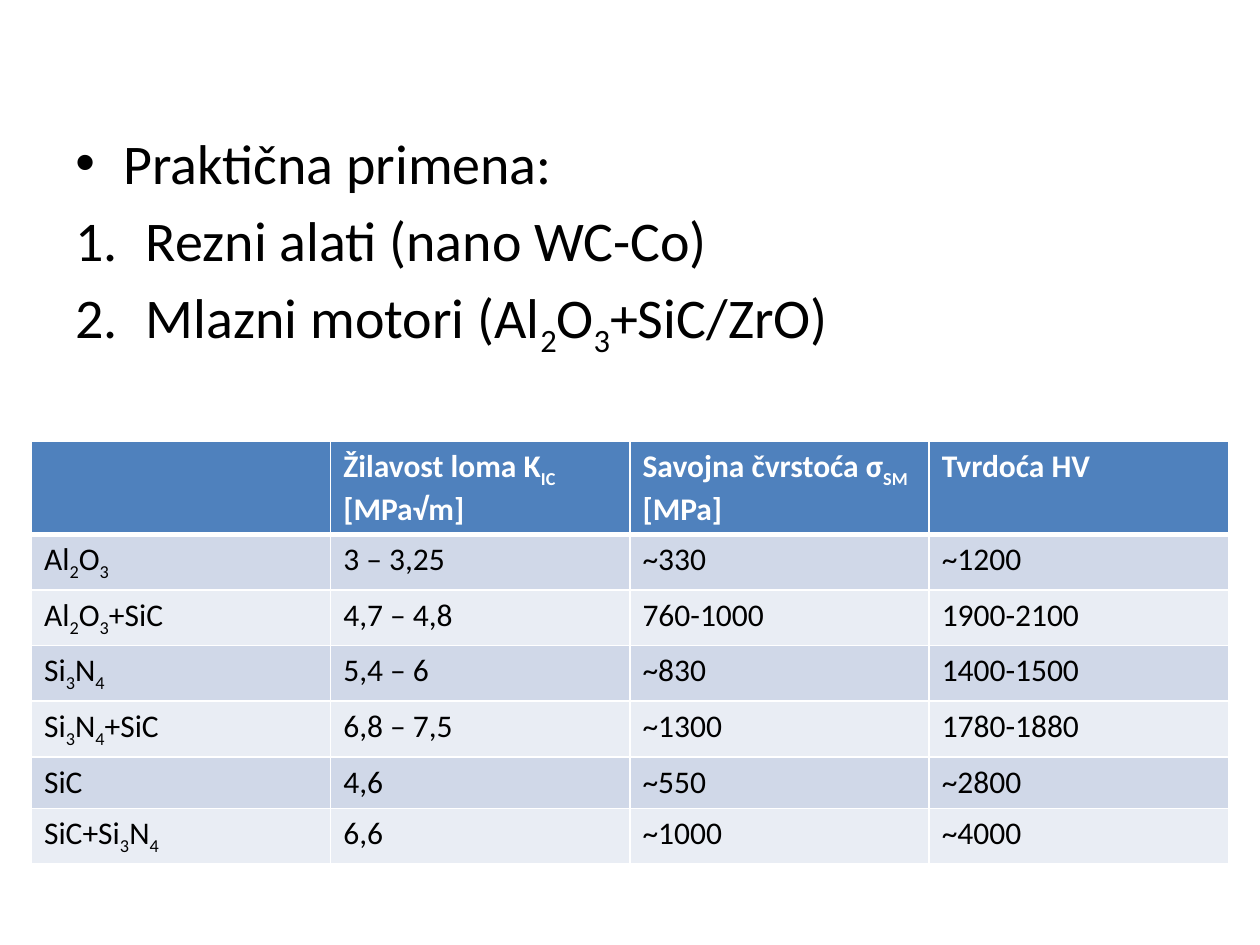
from lxml import etree
from pptx import Presentation
from pptx.dml.color import RGBColor
from pptx.oxml.ns import qn
from pptx.util import Inches, Pt

FONT = "Calibri"
COLORS = {
    "text": "000000",
    "white": "FFFFFF",
    "header": "4F81BD",
    "odd": "D0D8E8",
    "even": "E9EDF4",
}
SUBSCRIPT_MARK = "|"
BULLETS = [
    ("Praktična primena:", 0.38, "buChar", {"char": "•"}),
    ("Rezni alati (nano WC-Co)", 0.56, "buAutoNum", {"type": "arabicPeriod"}),
    ("Mlazni motori (Al|2|O|3|+SiC/ZrO)", 0.56, "buAutoNum", {"type": "arabicPeriod"}),
]
PROPERTIES = [
    ["", "Žilavost loma K|IC| [MPa√m]", "Savojna čvrstoća σ|SM |[MPa]", "Tvrdoća HV"],
    ["Al|2|O|3", "3 – 3,25", "~330", "~1200"],
    ["Al|2|O|3|+SiC", "4,7 – 4,8", "760-1000", "1900-2100"],
    ["Si|3|N|4", "5,4 – 6", "~830", "1400-1500"],
    ["Si|3|N|4|+SiC", "6,8 – 7,5", "~1300", "1780-1880"],
    ["SiC", "4,6", "~550", "~2800"],
    ["SiC+Si|3|N|4", "6,6", "~1000", "~4000"],
]


def write_text(paragraph, text, size=18, color="text", bold=False):
    for index, part in enumerate(text.split(SUBSCRIPT_MARK)):
        if not part:
            continue
        run = paragraph.add_run()
        run.text = part
        run.font.name = FONT
        run.font.size = Pt(size)
        run.font.bold = bold
        run.font.color.rgb = RGBColor.from_string(COLORS[color])
        if index % 2:
            run.font._element.set("baseline", "-25000")


def set_bullet(paragraph, indent, tag, attributes):
    properties = paragraph._p.get_or_add_pPr()
    properties.set("marL", str(Inches(indent)))
    properties.set("indent", str(-Inches(indent)))
    font = etree.SubElement(properties, qn("a:buFont"))
    font.set("typeface", "Arial" if tag == "buChar" else "+mj-lt")
    etree.SubElement(properties, qn(f"a:{tag}"), attributes)


def set_borders(cell, bottom_width):
    properties = cell._tc.get_or_add_tcPr()
    for side, width in (("L", 1), ("R", 1), ("T", 1), ("B", bottom_width)):
        line = etree.SubElement(properties, qn(f"a:ln{side}"), w=str(Pt(width)))
        fill = etree.SubElement(line, qn("a:solidFill"))
        etree.SubElement(fill, qn("a:srgbClr"), val=COLORS["white"])


def add_applications(slide, left, top, width, height):
    shape = slide.shapes.add_textbox(left, top, width, height)
    frame = shape.text_frame
    frame.word_wrap = True
    for index, (text, indent, tag, attributes) in enumerate(BULLETS):
        paragraph = frame.add_paragraph() if index else frame.paragraphs[0]
        paragraph.space_before = Pt(5.5)
        set_bullet(paragraph, indent, tag, attributes)
        write_text(paragraph, text, size=32)


def add_properties_table(slide, left, top, width, height):
    table = slide.shapes.add_table(
        len(PROPERTIES), len(PROPERTIES[0]), left, top, width, height
    ).table
    for row_index, values in enumerate(PROPERTIES):
        is_header = row_index == 0
        fill = "header" if is_header else ("odd" if row_index % 2 else "even")
        for column_index, text in enumerate(values):
            cell = table.cell(row_index, column_index)
            set_borders(cell, 3 if is_header else 1)
            cell.fill.solid()
            cell.fill.fore_color.rgb = RGBColor.from_string(COLORS[fill])
            write_text(
                cell.text_frame.paragraphs[0],
                text,
                color="white" if is_header else "text",
                bold=is_header,
            )
    for column_index in range(len(PROPERTIES[0])):
        cell = table.cell(1, column_index)
        top_line = cell._tc.tcPr.find(qn("a:lnT"))
        top_line.set("w", str(Pt(3)))


def main():
    presentation = Presentation()
    presentation.slide_width = Inches(10)
    presentation.slide_height = Inches(7.5)
    slide = presentation.slides.add_slide(presentation.slide_layouts[6])
    add_applications(slide, Inches(0.5), Inches(0.97), Inches(9), Inches(2.2))
    add_properties_table(slide, Inches(0.25), Inches(3.5), Inches(9.5), Inches(2.87))
    presentation.save("out.pptx")


if __name__ == "__main__":
    main()
